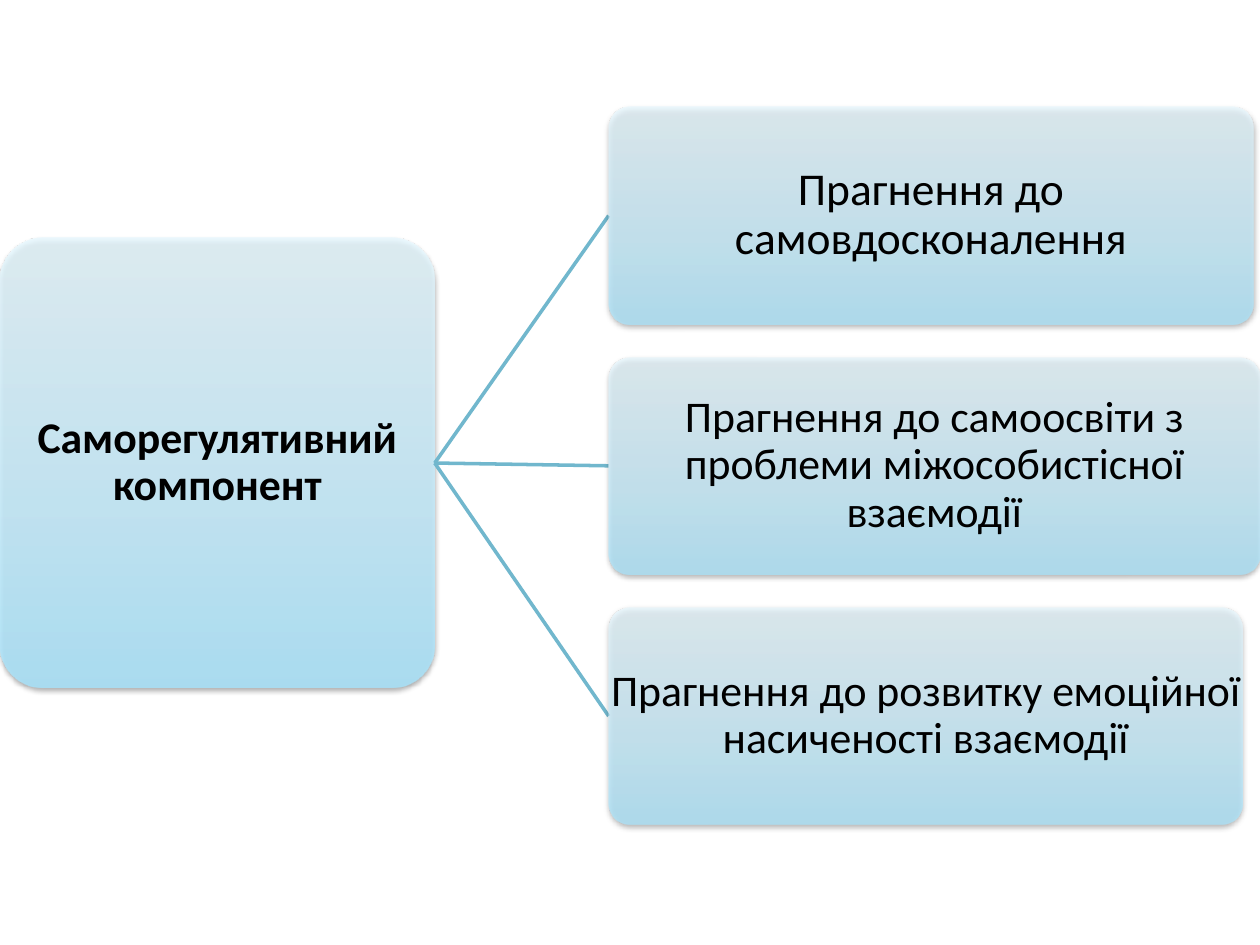
from lxml.etree import SubElement
from pptx import Presentation
from pptx.dml.color import RGBColor
from pptx.enum.shapes import MSO_CONNECTOR, MSO_SHAPE
from pptx.enum.text import MSO_ANCHOR, PP_ALIGN
from pptx.oxml import parse_xml
from pptx.oxml.ns import nsdecls, qn
from pptx.util import Pt

# Left, top, width and height of the root card
ROOT = (0, 136.1, 248.4, 257)
BRANCH_LEFT, BRANCH_TOP, BRANCH_HEIGHT, BRANCH_PITCH = 347.8, 61.2, 124, 143
GRADIENT = [(0, "A7E6FF"), (35, "C1EDFF"), (100, "E7F8FF")]

# Wording, card width and text size
BRANCHES = [
    ("Прагнення до самовдосконалення", 368.6, 26),
    ("Прагнення до самоосвіти з проблеми міжособистісної взаємодії", 372.2, 25),
    ("Прагнення до розвитку емоційної насиченості взаємодії", 362.2, 25),
]


def color(value):
    return RGBColor.from_string(value)


def add_text(slide, text, box, *, size, bold=False, ink="000000", font="Calibri"):
    label = slide.shapes.add_textbox(*map(Pt, box))
    frame = label.text_frame
    frame.word_wrap = True
    frame.vertical_anchor = MSO_ANCHOR.MIDDLE
    frame.margin_left = frame.margin_right = Pt(1.4)
    frame.margin_top = frame.margin_bottom = Pt(1.4)
    paragraph = frame.paragraphs[0]
    paragraph.alignment = PP_ALIGN.CENTER
    paragraph.line_spacing = 0.9
    run = paragraph.add_run()
    run.text = text
    run.font.name = font
    run.font.size = Pt(size)
    run.font.bold = bold
    run.font.color.rgb = color(ink)


def add_card(slide, box, opacity):
    card = slide.shapes.add_shape(MSO_SHAPE.ROUNDED_RECTANGLE, *map(Pt, box))
    card.adjustments[0] = 0.1
    card.line.fill.background()

    # Translucent gradient running from bottom to top
    card.fill.gradient()
    properties = card.fill._xPr
    stops = "".join(
        f'<a:gs pos="{position * 1000}"><a:srgbClr val="{tint}">'
        f'<a:alpha val="{opacity * 1000}"/></a:srgbClr></a:gs>'
        for position, tint in GRADIENT
    )
    gradient = parse_xml(
        f'<a:gradFill {nsdecls("a")} rotWithShape="1"><a:gsLst>{stops}</a:gsLst>'
        '<a:lin ang="16200000" scaled="0"/></a:gradFill>'
    )
    properties.replace(properties.find(qn("a:gradFill")), gradient)

    # Soft shadow below
    card.shadow.inherit = False
    properties.find(qn("a:effectLst")).append(parse_xml(
        f'<a:outerShdw {nsdecls("a")} blurRad="{Pt(3.1)}" dist="{Pt(1.6)}" '
        'dir="5400000" rotWithShape="0"><a:srgbClr val="000000">'
        '<a:alpha val="38000"/></a:srgbClr></a:outerShdw>'
    ))


def add_link(slide, start, end):
    link = slide.shapes.add_connector(MSO_CONNECTOR.STRAIGHT, *map(Pt, start + end))
    link.line.color.rgb = color("71B7CD")
    link.line.width = Pt(2)
    SubElement(link._element.spPr, qn("a:effectLst"))


def main():
    deck = Presentation()
    deck.slide_width, deck.slide_height = Pt(720), Pt(540)
    slide = deck.slides.add_slide(deck.slide_layouts[6])

    # Root component
    add_card(slide, ROOT, 80)
    add_text(slide, "Саморегулятивний компонент", ROOT, size=25, bold=True)
    left, top, width, height = ROOT
    hub = (left + width, top + height / 2)

    # Branches, each linked to the root
    for row, (wording, branch_width, size) in enumerate(BRANCHES):
        branch_top = BRANCH_TOP + row * BRANCH_PITCH
        box = (BRANCH_LEFT, branch_top, branch_width, BRANCH_HEIGHT)
        add_link(slide, hub, (BRANCH_LEFT, branch_top + BRANCH_HEIGHT / 2))
        add_card(slide, box, 70)
        add_text(slide, wording, box, size=size)

    deck.save("out.pptx")


if __name__ == "__main__":
    main()
